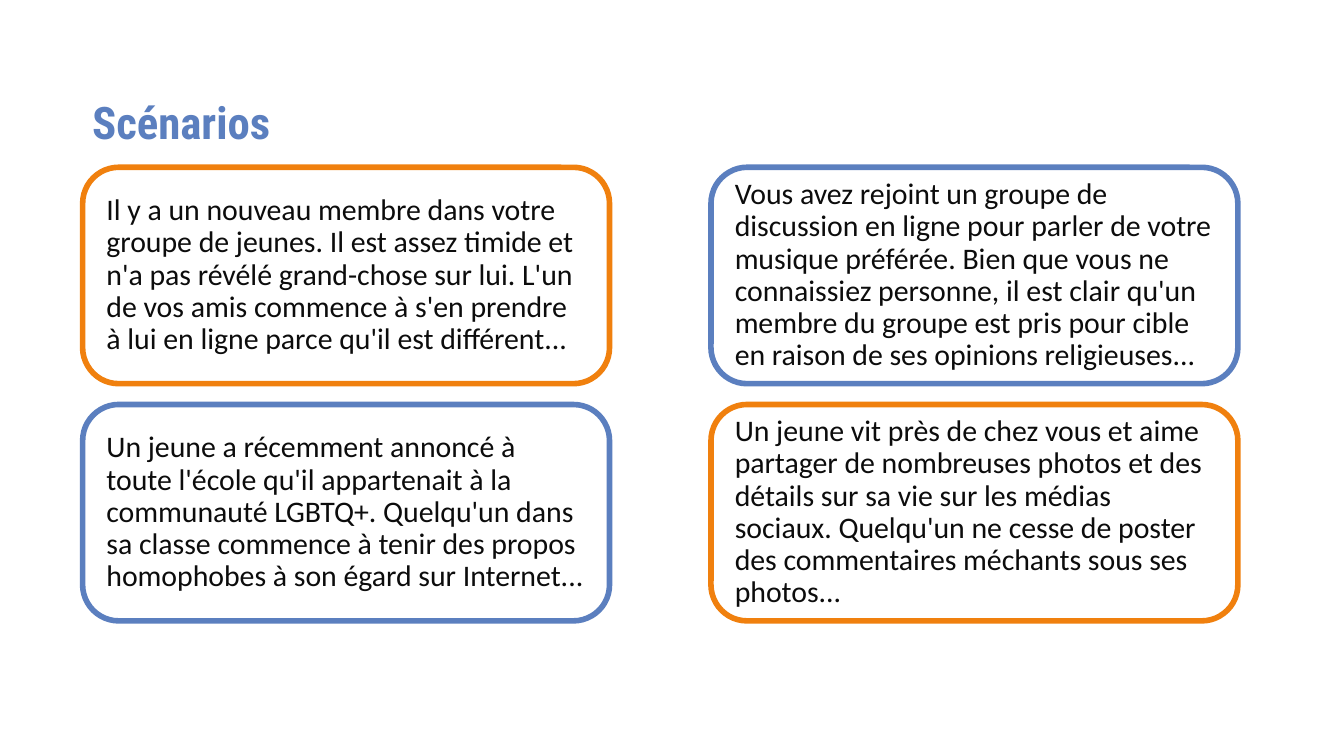
from pptx import Presentation
from pptx.dml.color import RGBColor
from pptx.enum.shapes import MSO_SHAPE
from pptx.enum.text import MSO_ANCHOR, MSO_AUTO_SIZE, PP_ALIGN
from pptx.util import Emu, Pt

PX = 4572  # 200 px to the inch
BLUE, ORANGE, INK = "5B7FBF", "F0800E", "0C0C0C"

# Card grid
LEFT, TOP = 123, 249
CARD_WIDTH, CARD_HEIGHT = 784, 322
COLUMN_STEP, ROW_STEP = 935, 353

# Scenarios, row by row
SCENARIOS = [
    [
        "Il y a un nouveau membre dans votre groupe de jeunes. Il est assez "
        "timide et n'a pas révélé grand-chose sur lui. L'un de vos amis "
        "commence à s'en prendre à lui en ligne parce qu'il est différent...",
        "Vous avez rejoint un groupe de discussion en ligne pour parler de "
        "votre musique préférée. Bien que vous ne connaissiez personne, il "
        "est clair qu'un membre du groupe est pris pour cible en raison de "
        "ses opinions religieuses...",
    ],
    [
        "Un jeune a récemment annoncé à toute l'école qu'il appartenait à la "
        "communauté LGBTQ+. Quelqu'un dans sa classe commence à tenir des "
        "propos homophobes à son égard sur Internet...",
        "Un jeune vit près de chez vous et aime partager de nombreuses photos "
        "et des détails sur sa vie sur les médias sociaux. Quelqu'un ne cesse "
        "de poster des commentaires méchants sous ses photos...",
    ],
]


def px(length):
    return Emu(length * PX)


def color(hex_string):
    return RGBColor.from_string(hex_string)


def write_text(shape, text, font, size, hex_string, side_inset, end_inset, bold=False):
    frame = shape.text_frame
    frame.text = text
    frame.word_wrap = True
    frame.auto_size = MSO_AUTO_SIZE.NONE
    frame.vertical_anchor = MSO_ANCHOR.MIDDLE
    frame.margin_left = frame.margin_right = px(side_inset)
    frame.margin_top = frame.margin_bottom = px(end_inset)
    para = frame.paragraphs[0]
    para.alignment = PP_ALIGN.LEFT
    para.line_spacing = 0.9
    para.font.name = font
    para.font.size = Pt(size)
    para.font.bold = bold
    para.font.color.rgb = color(hex_string)


def place_title(slide, text):
    title = slide.shapes.title
    title.left, title.top, title.width, title.height = map(px, (LEFT, 73, 660, 226))
    write_text(title, text, "Roboto Condensed", 24, BLUE, 14, 8, bold=True)


def add_card(slide, row, column, text):
    card = slide.shapes.add_shape(
        MSO_SHAPE.ROUNDED_RECTANGLE,
        px(LEFT + column * COLUMN_STEP), px(TOP + row * ROW_STEP),
        px(CARD_WIDTH), px(CARD_HEIGHT),
    )
    card.shadow.inherit = False
    card.fill.background()
    # Outline colours alternate like a chessboard
    card.line.color.rgb = color((ORANGE, BLUE)[(row + column) % 2])
    card.line.width = Pt(3)
    write_text(card, text, "Calibri", 16, INK, 20, 20)


def main():
    deck = Presentation()
    deck.slide_width, deck.slide_height = px(2000), px(1125)
    slide = deck.slides.add_slide(deck.slide_layouts.get_by_name("Title Only"))

    place_title(slide, "Scénarios")
    for row, texts in enumerate(SCENARIOS):
        for column, text in enumerate(texts):
            add_card(slide, row, column, text)

    deck.save("out.pptx")


if __name__ == "__main__":
    main()
